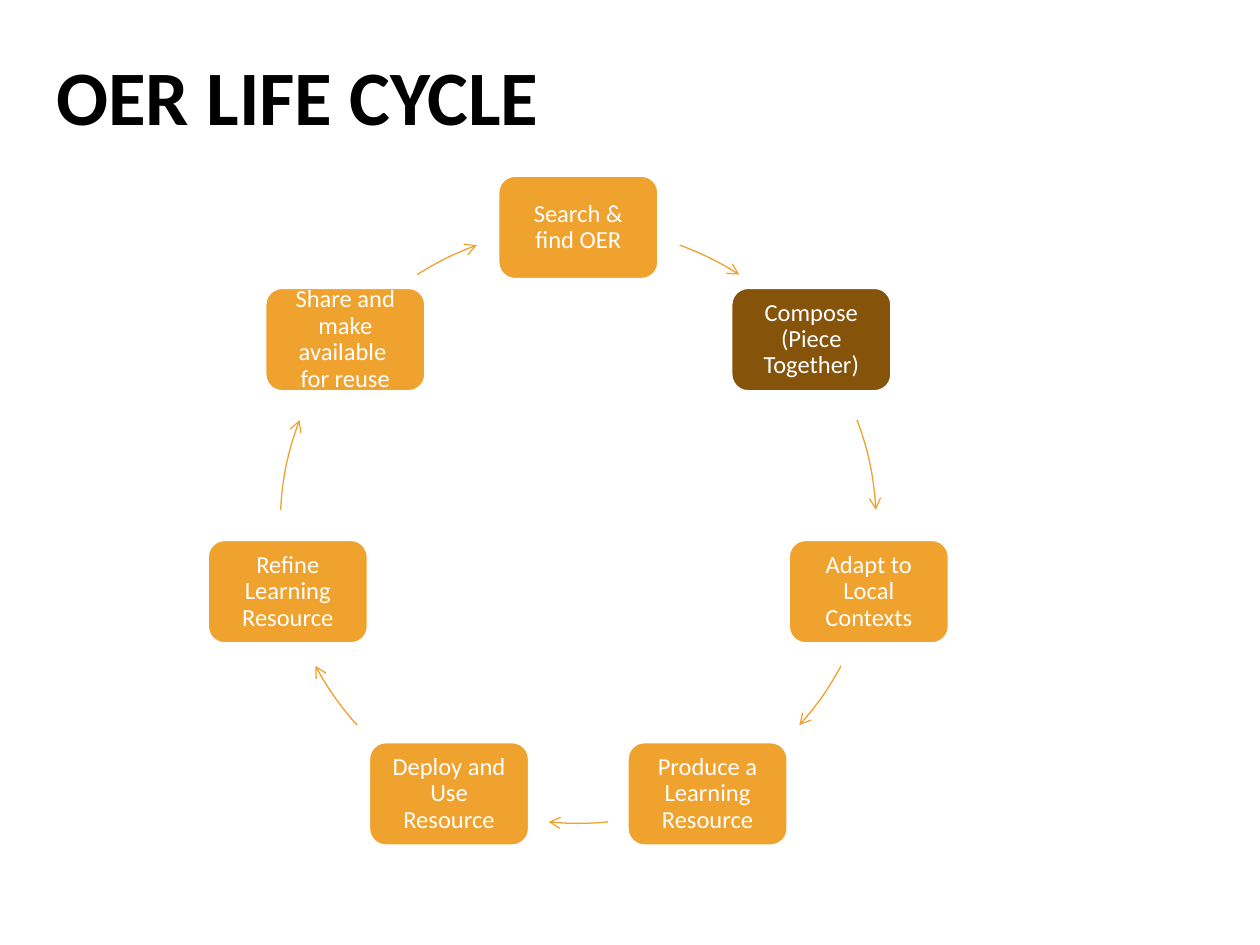
import math

import pptx
import pptx.dml.color
import pptx.enum.shapes
import pptx.enum.text
import pptx.oxml
import pptx.oxml.ns
import pptx.util
from pptx.util import Inches

TITLE = "OER LIFE CYCLE"

COLOURS = {
    "title": "000000",
    "stage": "F0A22E",
    "highlight": "85540A",
    "light": "FFFFFF",
}

# Stages clockwise from the top, each with its fill and the start and end
# angle (degrees clockwise from the top) of the arrow to the next stage
STAGES = [
    ("Search & find OER", "stage", 19.9, 32.7),
    ("Compose (Piece Together)", "highlight", 69.3, 87),
    ("Adapt to Local Contexts", "stage", 118.1, 132.1),
    ("Produce a Learning Resource", "stage", 174.3, 185.7),
    ("Deploy and Use Resource", "stage", 227.9, 241.9),
    ("Refine Learning Resource", "stage", 273, 290.7),
    ("Share and make available  for reuse", "stage", 327.3, 340.1),
]

FONT = "Calibri"
CENTRE_X, CENTRE_Y, RADIUS = 4.59, 4.17, 2.365
STAGE_W, STAGE_H = 1.28, 0.83
STAGE_INSET = 0.1

Shape = pptx.enum.shapes.MSO_SHAPE
Anchor = pptx.enum.text.MSO_ANCHOR


def rgb(name):
    return pptx.dml.color.RGBColor.from_string(COLOURS[name])


def set_line(shape, colour, width):
    shape.shadow.inherit = False
    shape.line.color.rgb = rgb(colour)
    shape.line.width = pptx.util.Pt(width)


def set_font(paragraph, size, colour, bold=False):
    font = paragraph.font
    font.name = FONT
    font.size = pptx.util.Pt(size)
    font.bold = bold
    font.color.rgb = rgb(colour)


def add_title(slide):
    title = slide.shapes.add_textbox(Inches(0.35), Inches(0.13), Inches(9), Inches(1.25))
    frame = title.text_frame
    frame.word_wrap = True
    frame.vertical_anchor = Anchor.MIDDLE
    frame.text = TITLE
    set_font(frame.paragraphs[0], 44, "title", bold=True)


def add_stage(slide, label, fill, angle):
    x = CENTRE_X + RADIUS * math.sin(angle)
    y = CENTRE_Y - RADIUS * math.cos(angle)
    stage = slide.shapes.add_shape(
        Shape.ROUNDED_RECTANGLE,
        Inches(x - STAGE_W / 2), Inches(y - STAGE_H / 2),
        Inches(STAGE_W), Inches(STAGE_H),
    )
    stage.fill.solid()
    stage.fill.fore_color.rgb = rgb(fill)
    set_line(stage, "light", 2)

    frame = stage.text_frame
    frame.word_wrap = True
    frame.vertical_anchor = Anchor.MIDDLE
    frame.margin_left = frame.margin_right = Inches(STAGE_INSET)
    frame.margin_top = frame.margin_bottom = Inches(STAGE_INSET)
    frame.text = label
    paragraph = frame.paragraphs[0]
    paragraph.alignment = pptx.enum.text.PP_ALIGN.CENTER
    paragraph.line_spacing = 0.9
    set_font(paragraph, 14, "light")


def add_arrow(slide, start, end):
    arrow = slide.shapes.add_shape(
        Shape.ARC,
        Inches(CENTRE_X - RADIUS), Inches(CENTRE_Y - RADIUS),
        Inches(2 * RADIUS), Inches(2 * RADIUS),
    )
    # Arc angles run from three o'clock, in 60000ths of a degree
    for index, angle in enumerate((start, end)):
        arrow.adjustments[index] = (angle - 90) % 360 * 60000 / 100000
    arrow.fill.background()
    set_line(arrow, "stage", 0.75)
    head = pptx.oxml.parse_xml(
        f'<a:tailEnd {pptx.oxml.ns.nsdecls("a")} type="arrow"/>'
    )
    arrow.line._get_or_add_ln().append(head)


def main():
    deck = pptx.Presentation()
    deck.slide_width, deck.slide_height = Inches(10), Inches(7.5)
    slide = deck.slides.add_slide(deck.slide_layouts[6])

    add_title(slide)

    # Ring of stages joined by arrows
    for index, (label, fill, start, end) in enumerate(STAGES):
        add_stage(slide, label, fill, index * math.tau / len(STAGES))
        add_arrow(slide, start, end)

    deck.save("out.pptx")


if __name__ == "__main__":
    main()
